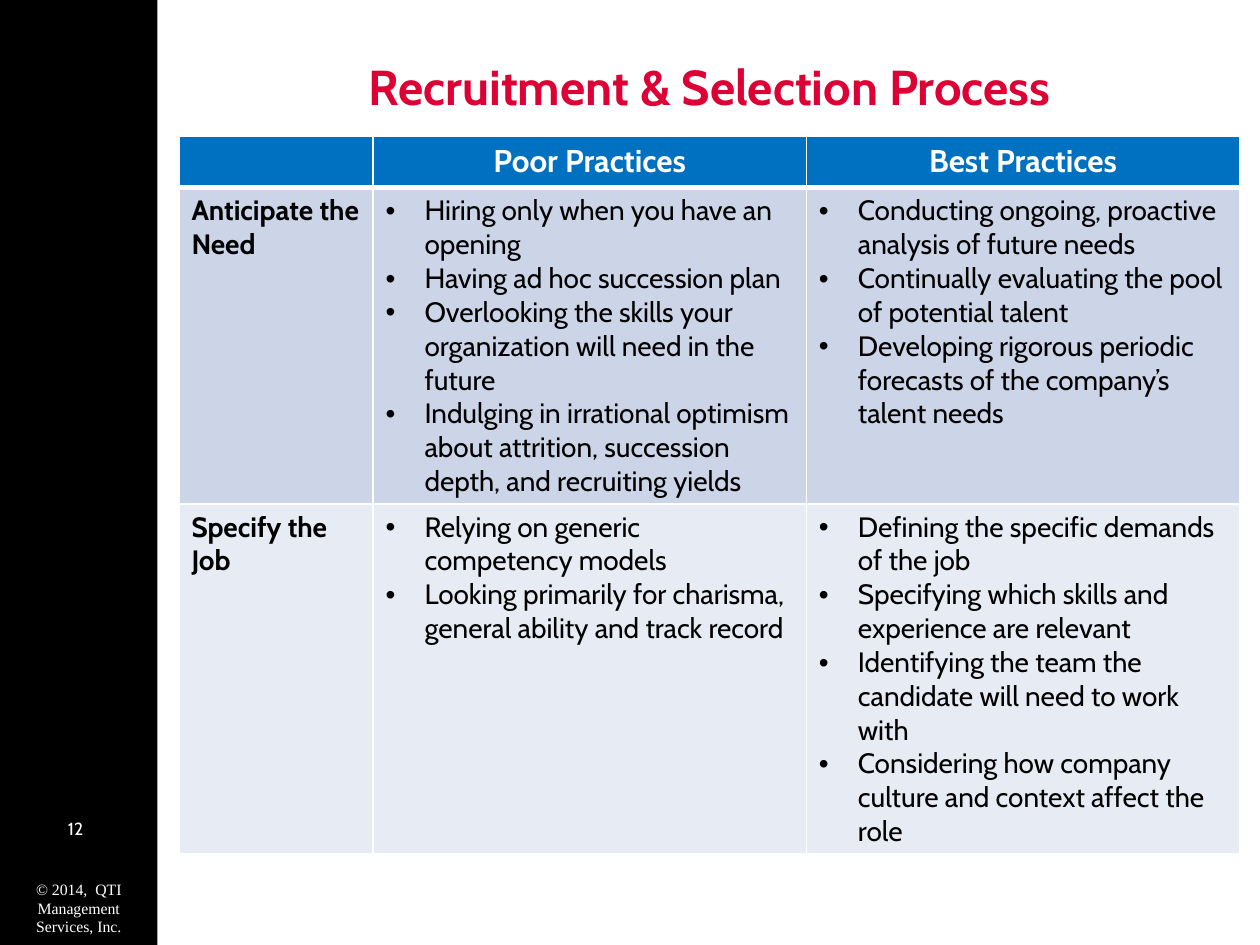
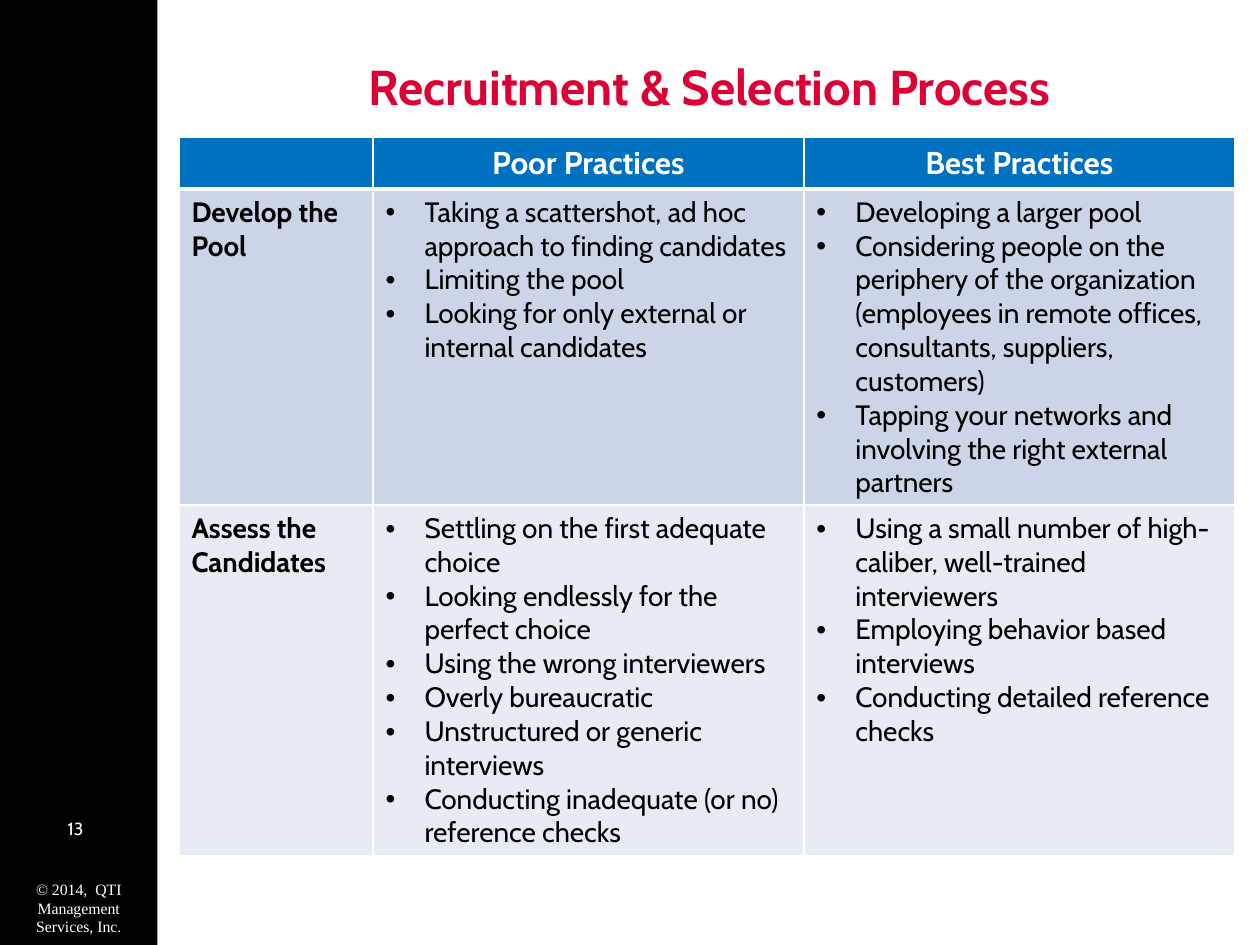
from dataclasses import dataclass

from lxml import etree
from pptx import Presentation
from pptx import util as u
from pptx.dml.color import RGBColor
from pptx.enum import shapes, text
from pptx.oxml import ns


@dataclass(frozen=True)
class Theme:
    band: str = "000000"
    title: str = "DC0034"
    header: str = "0070C0"
    rows: tuple = ("CCD5E8", "E7EBF4")
    ink: str = "000000"
    light: str = "FFFFFF"
    sans: str = "Cabin"
    serif: str = "Times New Roman"
    bullet_font: str = "Arial"
    title_size: int = 28
    header_size: int = 18
    body_size: int = 16
    number_size: int = 10
    copyright_size: int = 9


THEME = Theme()
SLIDE_WIDTH, SLIDE_HEIGHT = 10, 7.5
BAND_WIDTH = 1.25
CONTENT_LEFT, CONTENT_WIDTH = 1.42, 8.42
STAGE_WIDTH = 1.54
ROW_HEIGHTS = (0.41, 2.51, 2.78)
BULLET_INDENT = 0.31
FIRST_NUMBER = 12
TITLE = "Recruitment & Selection Process"
COPYRIGHT = "© 2014,  QTI Management Services, Inc."
HEADINGS = ("", "Poor Practices", "Best Practices")

PAGES = [
    {
        "top": 1.08,
        "practice_width": 3.44,
        "stages": [
            (
                "Anticipate the Need",
                [
                    "Hiring only when you have an opening",
                    "Having ad hoc succession plan",
                    "Overlooking the skills your organization will need in the future",
                    "Indulging in irrational optimism about attrition, succession depth, and recruiting yields",
                ],
                [
                    "Conducting ongoing, proactive analysis of future needs",
                    "Continually evaluating the pool of potential talent",
                    "Developing rigorous periodic forecasts of the company’s talent needs",
                ],
            ),
            (
                "Specify the Job",
                [
                    "Relying on generic competency models",
                    "Looking primarily for charisma, general ability and track record",
                ],
                [
                    "Defining the specific demands of the job",
                    "Specifying which skills and experience are relevant",
                    "Identifying the team the candidate will need to work with",
                    "Considering how company culture and context affect the role",
                ],
            ),
        ],
    },
    {
        "top": 1.09,
        "practice_width": 3.42,
        "stages": [
            (
                "Develop the Pool",
                [
                    "Taking a scattershot, ad hoc approach to finding candidates",
                    "Limiting the pool",
                    "Looking for only external or internal candidates",
                ],
                [
                    "Developing a larger pool",
                    "Considering people on the periphery of the organization "
                    "(employees in remote offices, consultants, suppliers, customers)",
                    "Tapping your networks and involving the right external partners",
                ],
            ),
            (
                "Assess the Candidates",
                [
                    "Settling on the first adequate choice",
                    "Looking endlessly for the perfect choice",
                    "Using the wrong interviewers",
                    "Overly bureaucratic",
                    "Unstructured or generic interviews",
                    "Conducting inadequate (or no) reference checks",
                ],
                [
                    "Using a small number of high-caliber, well-trained interviewers",
                    "Employing behavior based interviews",
                    "Conducting detailed reference checks",
                ],
            ),
        ],
    },
]


class Deck:
    def __init__(self, theme):
        self.theme = theme
        self.presentation = Presentation()
        self.presentation.slide_width = u.Inches(SLIDE_WIDTH)
        self.presentation.slide_height = u.Inches(SLIDE_HEIGHT)
        self.slide = None

    def new_slide(self):
        blank = self.presentation.slide_layouts[6]
        self.slide = self.presentation.slides.add_slide(blank)

    def add_words(self, paragraph, words, color, size, **style):
        run = paragraph.add_run()
        run.text = words
        values = {"name": self.theme.sans, "size": u.Pt(size), "bold": False, **style}
        for key, value in values.items():
            setattr(run.font, key, value)
        run.font.color.rgb = RGBColor.from_string(color)

    def band(self):
        band = self.slide.shapes.add_shape(
            shapes.MSO_SHAPE.RECTANGLE, 0, 0, u.Inches(BAND_WIDTH), u.Inches(SLIDE_HEIGHT)
        )
        band.shadow.inherit = False
        band.fill.solid()
        band.fill.fore_color.rgb = RGBColor.from_string(self.theme.band)
        band.line.fill.background()

    def label(self, words, box, color, size, anchor=text.MSO_ANCHOR.TOP, **style):
        frame = self.slide.shapes.add_textbox(*map(u.Inches, box)).text_frame
        frame.word_wrap = True
        frame.vertical_anchor = anchor
        paragraph = frame.paragraphs[0]
        paragraph.alignment = text.PP_ALIGN.CENTER
        self.add_words(paragraph, words, color, size, **style)

    def bullet(self, paragraph):
        properties = paragraph._p.get_or_add_pPr()
        indent = u.Inches(BULLET_INDENT)
        properties.set("marL", str(indent))
        properties.set("indent", str(-indent))
        etree.SubElement(properties, ns.qn("a:buFont"), typeface=self.theme.bullet_font)
        etree.SubElement(properties, ns.qn("a:buChar"), char="•")

    def paint(self, cell, fill, top=1, bottom=1):
        cell.fill.solid()
        cell.fill.fore_color.rgb = RGBColor.from_string(fill)
        properties = cell._tc.get_or_add_tcPr()
        edges = {"lnL": 1, "lnR": 1, "lnT": top, "lnB": bottom}
        for position, (edge, points) in enumerate(edges.items()):
            line = etree.Element(ns.qn(f"a:{edge}"), w=str(u.Pt(points)))
            solid = etree.SubElement(line, ns.qn("a:solidFill"))
            etree.SubElement(solid, ns.qn("a:srgbClr"), val=self.theme.light)
            properties.insert(position, line)

    def practices_table(self, top, practice_width, stages):
        theme = self.theme
        widths = (STAGE_WIDTH, practice_width, practice_width)
        box = (CONTENT_LEFT, top, sum(widths), sum(ROW_HEIGHTS))
        table = self.slide.shapes.add_table(
            len(ROW_HEIGHTS), len(widths), *map(u.Inches, box)
        ).table
        for column, width in zip(table.columns, widths):
            column.width = u.Inches(width)
        for row, height in zip(table.rows, ROW_HEIGHTS):
            row.height = u.Inches(height)

        for cell, heading in zip(table.rows[0].cells, HEADINGS):
            self.paint(cell, theme.header, bottom=3)
            if heading:
                paragraph = cell.text_frame.paragraphs[0]
                paragraph.alignment = text.PP_ALIGN.CENTER
                self.add_words(paragraph, heading, theme.light, theme.header_size, bold=True)

        for index, (stage, *practices) in enumerate(stages):
            stage_cell, *practice_cells = table.rows[index + 1].cells
            for cell in (stage_cell, *practice_cells):
                self.paint(cell, theme.rows[index], top=1 if index else 3)
            self.add_words(
                stage_cell.text_frame.paragraphs[0], stage, theme.ink, theme.body_size, bold=True
            )
            for cell, items in zip(practice_cells, practices):
                frame = cell.text_frame
                for order, item in enumerate(items):
                    paragraph = frame.add_paragraph() if order else frame.paragraphs[0]
                    self.bullet(paragraph)
                    self.add_words(paragraph, item, theme.ink, theme.body_size)

    def page(self, number, content):
        theme = self.theme
        self.new_slide()
        self.band()
        self.label(str(number), (0, 6.44, 1.2, 0.33), theme.light, theme.number_size)
        self.label(
            COPYRIGHT, (0, 6.93, BAND_WIDTH, 0.56), theme.light, theme.copyright_size,
            name=theme.serif,
        )
        self.label(
            TITLE, (CONTENT_LEFT, 0.38, CONTENT_WIDTH, 0.6), theme.title, theme.title_size,
            anchor=text.MSO_ANCHOR.MIDDLE, bold=True,
        )
        self.practices_table(**content)


def main():
    deck = Deck(THEME)
    for number, content in enumerate(PAGES, FIRST_NUMBER):
        deck.page(number, content)
    deck.presentation.save("out.pptx")


if __name__ == "__main__":
    main()
